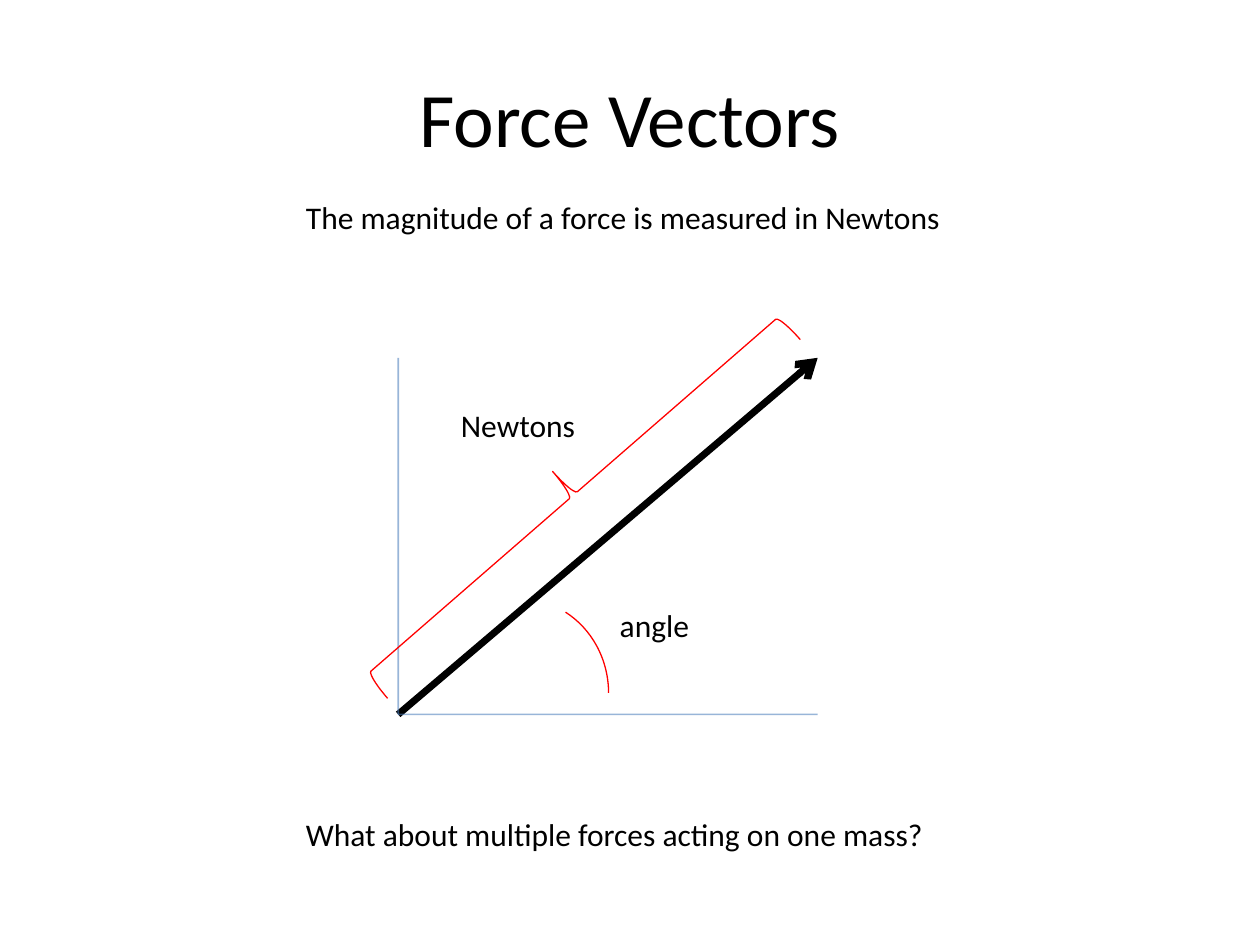
from lxml.etree import SubElement
from pptx import Presentation
from pptx.dml.color import RGBColor
from pptx.enum.shapes import MSO_CONNECTOR, MSO_SHAPE
from pptx.enum.text import MSO_ANCHOR, MSO_AUTO_SIZE, PP_ALIGN
from pptx.oxml.ns import qn
from pptx.util import Inches, Pt

BLACK = RGBColor(0x00, 0x00, 0x00)
AXIS_BLUE = RGBColor(0x4B, 0x7E, 0xBC)
MARK_RED = RGBColor(0xFF, 0x00, 0x00)
FONT = "Calibri"

# Content: wording with left, top, width in inches
TITLE = "Force Vectors"
LABELS = [
    ("The magnitude of a force is measured in Newtons", 2.33, 1.52, 5.3),
    ("Newtons", 3.56, 3.17, 1.12),
    ("angle", 4.82, 4.76, 0.76),
    ("What about multiple forces acting on one mass?", 2.33, 6.42, 5.16),
]
LABEL_HEIGHT = 0.4

# Diagram: the vector is the diagonal between the two axes
ORIGIN = (3.16, 5.67)
TIP = (6.49, 2.84)
X_AXIS_END = (TIP[0], ORIGIN[1])
Y_AXIS_END = (ORIGIN[0], TIP[1])
BRACE_BOX = (4.3, 1.76, 0.5, 4.34)
BRACE_ROTATION = 229
ARC_BOX = (3.41, 4.75, 1.42, 1.5)
ARC_START, ARC_END = 179.95, 0


def format_text(text_frame, size):
    for paragraph in text_frame.paragraphs:
        for run in paragraph.runs:
            run.font.name = FONT
            run.font.size = Pt(size)
            run.font.color.rgb = BLACK


def add_line(slide, end, color, width):
    """Draw a line from the origin of the diagram."""
    points = [Inches(value) for value in ORIGIN + end]
    connector = slide.shapes.add_connector(MSO_CONNECTOR.STRAIGHT, *points)
    connector.line.color.rgb = color
    connector.line.width = Pt(width)
    SubElement(connector._element.spPr, qn("a:effectLst"))
    return connector


def add_mark(slide, preset, box):
    """Draw a thin red outline shape."""
    shape = slide.shapes.add_shape(preset, *[Inches(value) for value in box])
    shape.shadow.inherit = False
    shape.fill.background()
    shape.line.color.rgb = MARK_RED
    shape.line.width = Pt(0.75)
    return shape


def add_label(slide, text, left, top, width):
    box = [Inches(value) for value in (left, top, width, LABEL_HEIGHT)]
    text_frame = slide.shapes.add_textbox(*box).text_frame
    text_frame.text = text
    text_frame.word_wrap = False
    text_frame.auto_size = MSO_AUTO_SIZE.SHAPE_TO_FIT_TEXT
    format_text(text_frame, 18)


def main():
    presentation = Presentation()
    presentation.slide_width = Inches(10)
    presentation.slide_height = Inches(7.5)
    slide = presentation.slides.add_slide(presentation.slide_layouts[5])

    # Title
    title = slide.shapes.title
    title.left, title.top = Inches(0.5), Inches(0.3)
    title.width, title.height = Inches(9), Inches(1.25)
    title.text_frame.text = TITLE
    title.text_frame.vertical_anchor = MSO_ANCHOR.MIDDLE
    title.text_frame.paragraphs[0].alignment = PP_ALIGN.CENTER
    format_text(title.text_frame, 44)

    # Force vector with arrowhead
    vector = add_line(slide, TIP, BLACK, 4)
    SubElement(vector.line._get_or_add_ln(), qn("a:tailEnd"), type="arrow")

    # Translucent axes
    for end in (X_AXIS_END, Y_AXIS_END):
        axis = add_line(slide, end, AXIS_BLUE, 1)
        color = axis.line._get_or_add_ln().find(".//" + qn("a:srgbClr"))
        SubElement(color, qn("a:alpha"), val="57000")

    # Magnitude brace and angle arc
    brace = add_mark(slide, MSO_SHAPE.RIGHT_BRACE, BRACE_BOX)
    brace.rotation = BRACE_ROTATION
    arc = add_mark(slide, MSO_SHAPE.ARC, ARC_BOX)
    arc.adjustments[0] = ARC_START
    arc.adjustments[1] = ARC_END

    # Labels
    for label in LABELS:
        add_label(slide, *label)

    presentation.save("out.pptx")


if __name__ == "__main__":
    main()
